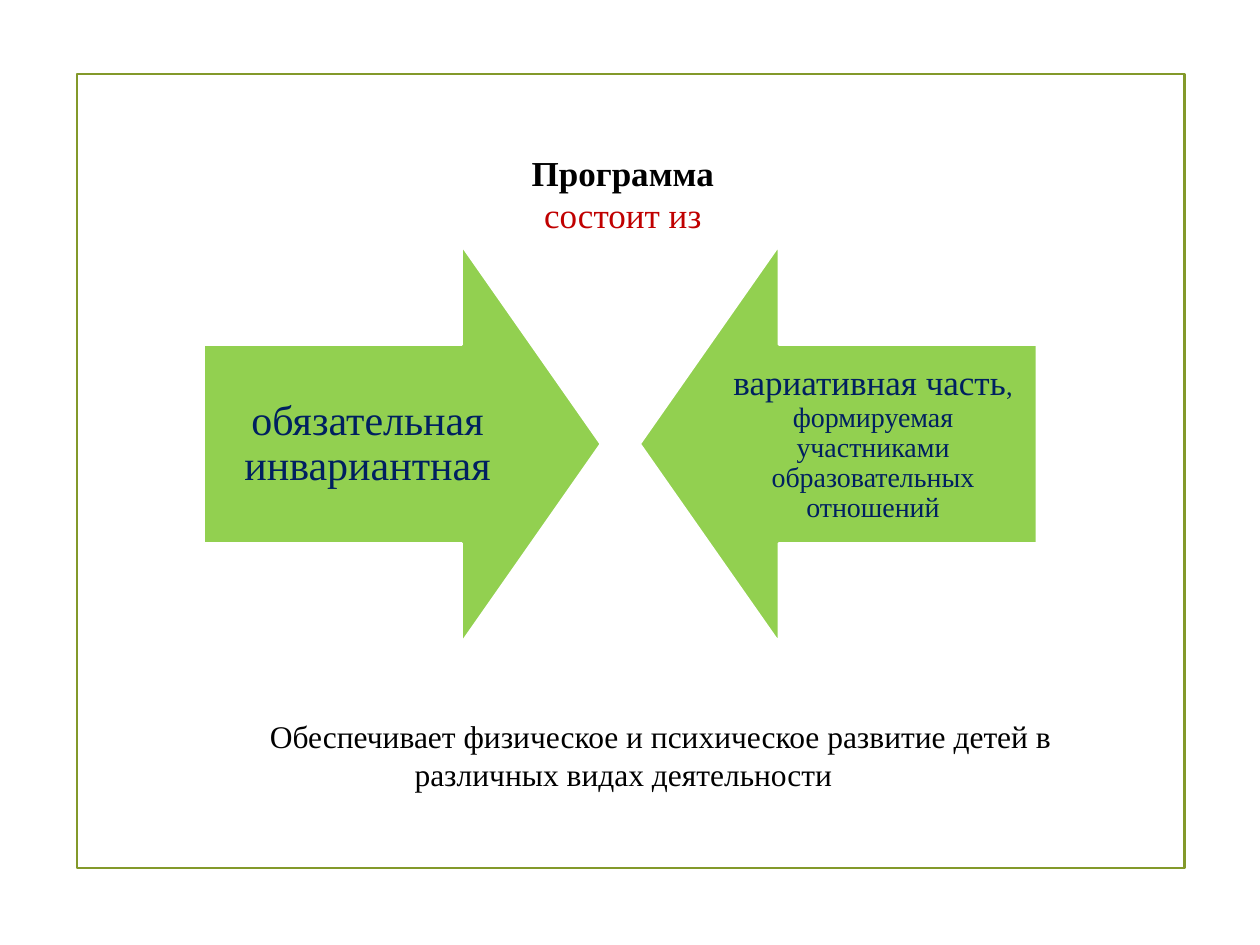
from dataclasses import dataclass
from typing import Any

from pptx import Presentation
from pptx.dml.color import RGBColor
from pptx.enum.shapes import MSO_SHAPE
from pptx.enum.text import MSO_ANCHOR, MSO_AUTO_SIZE, PP_ALIGN
from pptx.util import Cm, Pt


@dataclass(frozen=True)
class Theme:
    face: str = "Times New Roman"
    black: str = "000000"
    red: str = "C00000"
    navy: str = "002060"
    green: str = "92D050"
    olive: str = "83992A"
    white: str = "FFFFFF"
    line: float = 1.25
    large: int = 24
    head: int = 20
    note: int = 18
    small: int = 16
    tiny: int = 15


@dataclass(frozen=True)
class Box:
    left: float
    top: float
    width: float
    height: float

    def size(self) -> tuple[Cm, ...]:
        return tuple(Cm(n) for n in (self.left, self.top, self.width, self.height))


@dataclass(frozen=True)
class Span:
    text: str
    size: int
    color: str
    bold: bool = False


@dataclass(frozen=True)
class Part:
    arrow: Box
    turn: int
    label: Box
    inset: float
    spans: tuple[Span, ...]


THEME = Theme()
FRAME = Box(1.55, 1.5, 22.33, 16)
HEAD = Box(10.36, 2.92, 4.39, 1.96)
NOTE = Box(2.97, 14.33, 19.2, 1.8)
TITLE = (
    (Span("Программа", THEME.head, THEME.black, True),),
    (Span("состоит из", THEME.head, THEME.red),),
)
TEXT = "Обеспечивает физическое и психическое развитие детей в различных видах деятельности"
PARTS = (
    Part(Box(4.11, 4.95, 8, 8), 270, Box(4.11, 6.96, 6.6, 4), 0.48,
         (Span("обязательная инвариантная", THEME.large, THEME.navy),)),
    Part(Box(12.9, 4.95, 8, 8), 90, Box(14.3, 6.96, 6.6, 4), 0.4,
         (Span("вариативная часть", THEME.head, THEME.navy),
          Span(", ", THEME.tiny, THEME.navy),
          Span("формируемая участниками образовательных отношений",
               THEME.small, THEME.navy))),
)


def style(item: Any, form: dict[str, Any]) -> None:
    for name, value in form.items():
        setattr(item, name, value)


def write(par: Any, spans: tuple[Span, ...], space: float = 1) -> None:
    style(par, {"alignment": PP_ALIGN.CENTER, "line_spacing": space})
    for span in spans:
        run = par.add_run()
        run.text = span.text
        style(run.font, {"name": THEME.face, "size": Pt(span.size), "bold": span.bold})
        run.font.color.rgb = RGBColor.from_string(span.color)


def draw(slide: Any, kind: MSO_SHAPE, box: Box, edge: str) -> Any:
    shape = slide.shapes.add_shape(kind, *box.size())
    shape.shadow.inherit = False
    shape.fill.background()
    shape.line.color.rgb = RGBColor.from_string(edge)
    shape.line.width = Pt(THEME.line)
    return shape


def point(slide: Any, part: Part) -> None:
    arrow = draw(slide, MSO_SHAPE.DOWN_ARROW, part.arrow, THEME.white)
    arrow.rotation = part.turn
    arrow.adjustments[0], arrow.adjustments[1] = 0.5, 0.35
    arrow.fill.solid()
    arrow.fill.fore_color.rgb = RGBColor.from_string(THEME.green)
    frame = slide.shapes.add_textbox(*part.label.size()).text_frame
    sides = ("left", "top", "right", "bottom")
    style(frame, {f"margin_{side}": Cm(part.inset) for side in sides})
    style(frame, {"word_wrap": True, "vertical_anchor": MSO_ANCHOR.MIDDLE})
    write(frame.paragraphs[0], part.spans, 0.9)


def head(slide: Any) -> None:
    title = slide.shapes.title
    style(title, dict(zip(("left", "top", "width", "height"), HEAD.size())))
    frame = title.text_frame
    style(frame, {"word_wrap": False, "vertical_anchor": MSO_ANCHOR.TOP,
                  "auto_size": MSO_AUTO_SIZE.SHAPE_TO_FIT_TEXT})
    for row, spans in enumerate(TITLE):
        write(frame.add_paragraph() if row else frame.paragraphs[0], spans)


def note(slide: Any) -> None:
    frame = slide.shapes.add_textbox(*NOTE.size()).text_frame
    style(frame, {"word_wrap": True, "auto_size": MSO_AUTO_SIZE.SHAPE_TO_FIT_TEXT})
    par = frame.paragraphs[0]
    write(par, (Span(TEXT, THEME.note, THEME.black),))
    form = par._p.get_or_add_pPr()
    form.set("marL", "0")
    form.set("indent", str(Cm(1.5)))


def main() -> None:
    deck = Presentation()
    style(deck, {"slide_width": Cm(25.4), "slide_height": Cm(19.05)})
    slide = deck.slides.add_slide(deck.slide_layouts[5])
    draw(slide, MSO_SHAPE.RECTANGLE, FRAME, THEME.olive)
    note(slide)
    for part in PARTS:
        point(slide, part)
    head(slide)
    deck.save("out.pptx")


if __name__ == "__main__":
    main()
